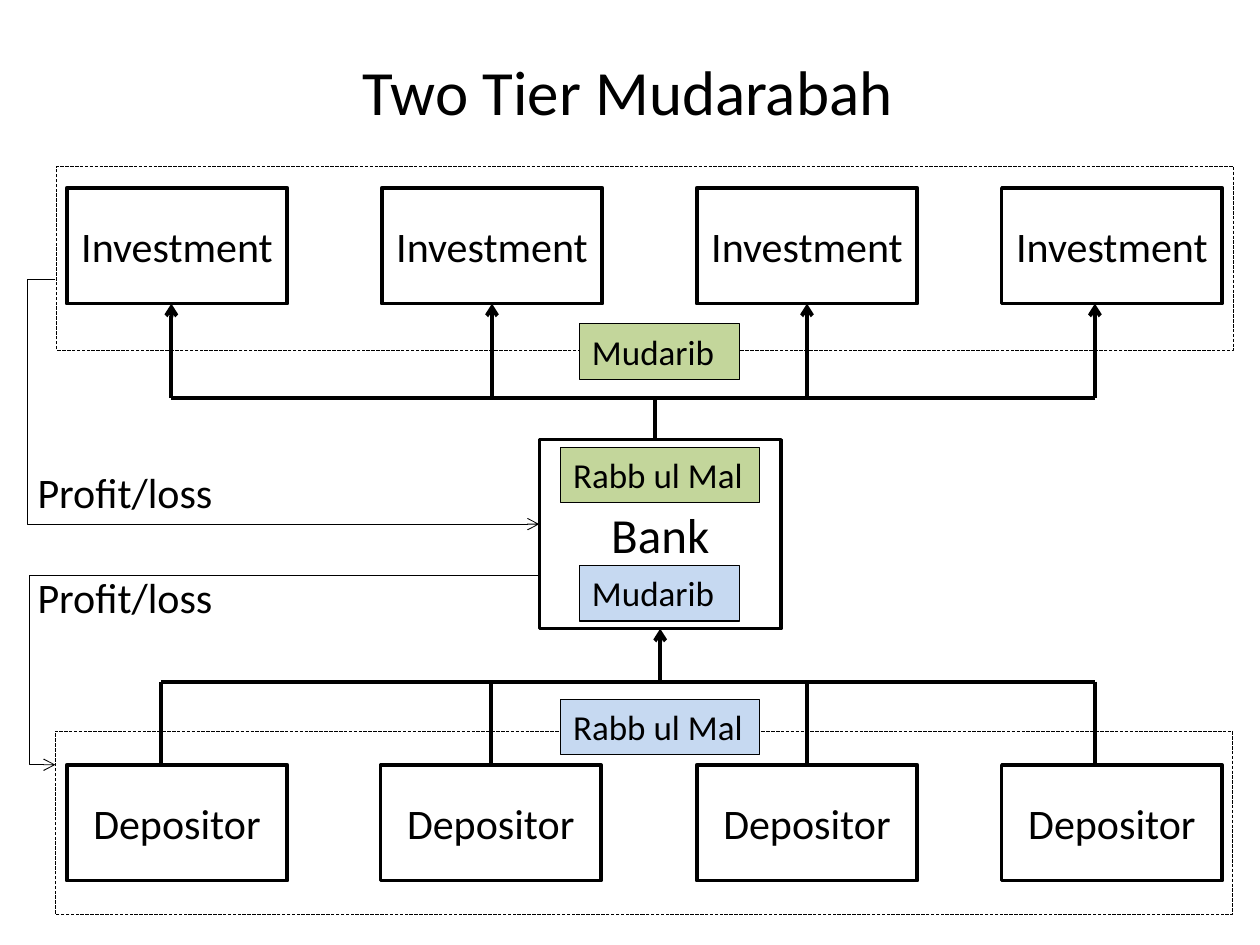
from lxml import etree
from pptx import Presentation
from pptx import util as u
from pptx.dml.color import RGBColor
from pptx.enum import dml, shapes, text
from pptx.oxml.ns import qn

THEME = dict(font="Calibri", ink="000000", paper="FFFFFF", green="C3D69B", blue="C6D9F1",
             title=36, bank=28, body=24, tag=20,
             frame_line=0.25, flow_line=0.5, tag_line=0.75, box_line=2, bus_line=2.25)

# Content: lengths in inches
TITLE = ("Two Tier Mudarabah", 2.78, 0.37, 4.51, 0.71)
FRAMES = [(0.45, 1.32), (0.44, 5.8)]
FRAME_SIZE = (9.34, 1.46)
BOX_SIZE = (1.75, 0.92)
BANK = ("Bank", 4.28, 3.49, 1.92, 1.5)
# label, box top, box lefts, drop xs, bus y, side of box met, arrow on drops
TIERS = [
    ("Investment", 1.49, (0.53, 3.03, 5.53, 7.95), (1.36, 3.89, 6.41, 8.69), 3.16, 2, True),
    ("Depositor", 6.07, (0.53, 3.02, 5.53, 7.95), (1.28, 3.89, 6.41, 8.69), 5.41, 0, False),
]
TAGS = [("Mudarib", 2.57, "green"), ("Rabb ul Mal", 3.55, "green"),
        ("Mudarib", 4.49, "blue"), ("Rabb ul Mal", 5.55, "blue")]
TAG_PLACE = {"Mudarib": (4.6, 1.27), "Rabb ul Mal": (4.45, 1.58)}
TAG_HEIGHT = 0.44
# start, end, bend position as a share of the width
FLOWS = [((0.44, 2.22), (4.28, 4.16), -0.057), ((4.28, 4.57), (0.44, 6.07), 1.053)]
FLOW_LABELS = [("Profit/loss", 0.2, top, 1.66, 0.5) for top in (3.65, 4.49)]

prs = Presentation()
prs.slide_width, prs.slide_height = u.Inches(10), u.Inches(7.5)
s = prs.slides.add_slide(prs.slide_layouts[6])


def color(name):
    return RGBColor.from_string(THEME[name])


def write(sp, label, size, centred=False):
    tf = sp.text_frame
    tf.text = label
    tf.word_wrap = True
    tf.vertical_anchor = text.MSO_ANCHOR.MIDDLE if centred else text.MSO_ANCHOR.TOP
    p = tf.paragraphs[0]
    p.alignment = text.PP_ALIGN.CENTER if centred else text.PP_ALIGN.LEFT
    font = p.runs[0].font
    font.name, font.size = THEME["font"], u.Pt(THEME[size])
    font.color.rgb = color("ink")


def rect(x, y, w, h, line, fill="paper"):
    sp = s.shapes.add_shape(shapes.MSO_SHAPE.RECTANGLE, *map(u.Inches, (x, y, w, h)))
    sp.shadow.inherit = False
    sp.fill.solid()
    sp.fill.fore_color.rgb = color(fill)
    sp.line.color.rgb = color("ink")
    sp.line.width = u.Pt(THEME[line])
    return sp


def label_box(label, x, y, w, h, size):
    write(s.shapes.add_textbox(*map(u.Inches, (x, y, w, h))), label, size)


def connect(start, end, line="bus_line", arrow=False, bend=None):
    kind = shapes.MSO_CONNECTOR.STRAIGHT if bend is None else shapes.MSO_CONNECTOR.ELBOW
    cx = s.shapes.add_connector(kind, *map(u.Inches, (*start, *end)))
    cx.line.color.rgb = color("ink")
    cx.line.width = u.Pt(THEME[line])
    if arrow:
        etree.SubElement(cx.line._get_or_add_ln(), qn("a:tailEnd"), type="arrow")
    sp_pr = cx._element.spPr
    etree.SubElement(sp_pr, qn("a:effectLst"))
    if bend is not None:
        guides = sp_pr.find(qn("a:prstGeom")).get_or_add_avLst()
        etree.SubElement(guides, qn("a:gd"), name="adj1", fmla=f"val {round(bend * 100000)}")
    return cx


# Dashed frames and the bank
for x, y in FRAMES:
    rect(x, y, *FRAME_SIZE, "frame_line").line.dash_style = dml.MSO_LINE.LONG_DASH
label, bank_x, bank_y, bank_w, bank_h = BANK
bank = rect(bank_x, bank_y, bank_w, bank_h, "box_line")
write(bank, label, "bank", centred=True)

# Tiers: boxes, bus and drops, glued where a drop meets the middle of a side
for label, top, lefts, drops, bus_y, side, arrow in TIERS:
    connect((drops[0], bus_y), (drops[-1], bus_y))
    edge = top + BOX_SIZE[1] if side == 2 else top
    for left, x in zip(lefts, drops):
        box = rect(left, top, *BOX_SIZE, "box_line")
        write(box, label, "body", centred=True)
        middle = left + BOX_SIZE[0] / 2
        glued = abs(x - middle) < 0.02
        x = middle if glued else x
        drop = connect((x, bus_y), (x, edge), arrow=arrow)
        if glued:
            drop.end_connect(box, side)

# Links between the buses and the bank
connect((5.2, TIERS[0][4]), (5.2, bank_y))
bank_mid = bank_x + bank_w / 2
connect((bank_mid, TIERS[1][4]), (bank_mid, bank_y + bank_h), arrow=True).end_connect(bank, 2)

# Profit and loss flows
for start, end, bend in FLOWS:
    connect(start, end, "flow_line", arrow=True, bend=bend)
for flow_label in FLOW_LABELS:
    label_box(*flow_label, "body")

# Role tags and title
for label, y, fill in TAGS:
    x, w = TAG_PLACE[label]
    write(rect(x, y, w, TAG_HEIGHT, "tag_line", fill), label, "tag")
label_box(*TITLE, "title")

prs.save("out.pptx")
